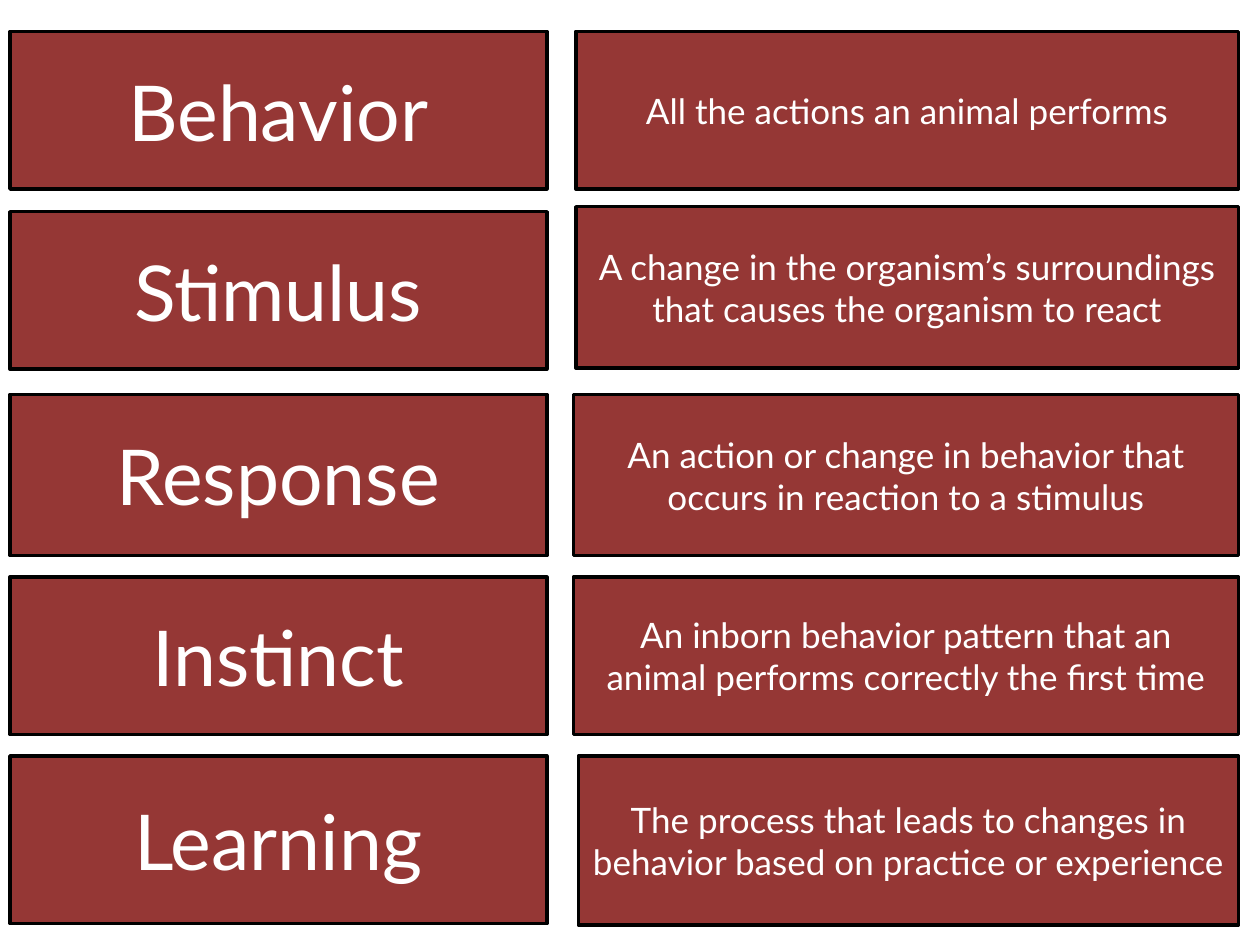
from pptx import Presentation
from pptx import util as u
from pptx.dml.color import RGBColor
from pptx.enum import shapes, text

presentation = Presentation()
presentation.slide_width = u.Inches(10)
presentation.slide_height = u.Inches(7.5)
slide = presentation.slides.add_slide(presentation.slide_layouts[6])


def color(value):
    return RGBColor.from_string(value)


def add_box(words, left, top, width, height, size, fill="953735", line="000000", ink="FFFFFF"):
    shape = slide.shapes.add_shape(
        shapes.MSO_SHAPE.FLOWCHART_PROCESS,
        u.Inches(left), u.Inches(top), u.Inches(width), u.Inches(height))
    shape.shadow.inherit = False
    shape.fill.solid()
    shape.fill.fore_color.rgb = color(fill)
    shape.line.color.rgb = color(line)
    shape.line.width = u.Pt(2)
    frame = shape.text_frame
    frame.word_wrap = True
    frame.vertical_anchor = text.MSO_ANCHOR.MIDDLE
    paragraph = frame.paragraphs[0]
    paragraph.alignment = text.PP_ALIGN.CENTER
    run = paragraph.add_run()
    run.text = words
    run.font.size = u.Pt(size)
    run.font.name = "Lato"
    run.font.color.rgb = color(ink)


term_left, term_width = 0.08, 4.26
definition_right = 9.83

rows = [
    ("Behavior", 0.25, 1.25,
     "All the actions an animal performs", 4.57, 0.25, 1.25),
    ("Stimulus", 1.68, 1.25,
     "A change in the organism’s surroundings that causes the organism to react", 4.57, 1.64, 1.28),
    ("Response", 3.13, 1.28,
     "An action or change in behavior that occurs in reaction to a stimulus", 4.55, 3.13, 1.28),
    ("Instinct", 4.58, 1.25,
     "An inborn behavior pattern that an animal performs correctly the first time", 4.55, 4.58, 1.25),
    ("Learning", 6, 1.33,
     "The process that leads to changes in behavior based on practice or experience", 4.59, 6, 1.34),
]

for term, term_top, term_height, definition, left, top, height in rows:
    add_box(term, term_left, term_top, term_width, term_height, size=44)
    add_box(definition, left, top, definition_right - left, height, size=20)

presentation.save("out.pptx")
